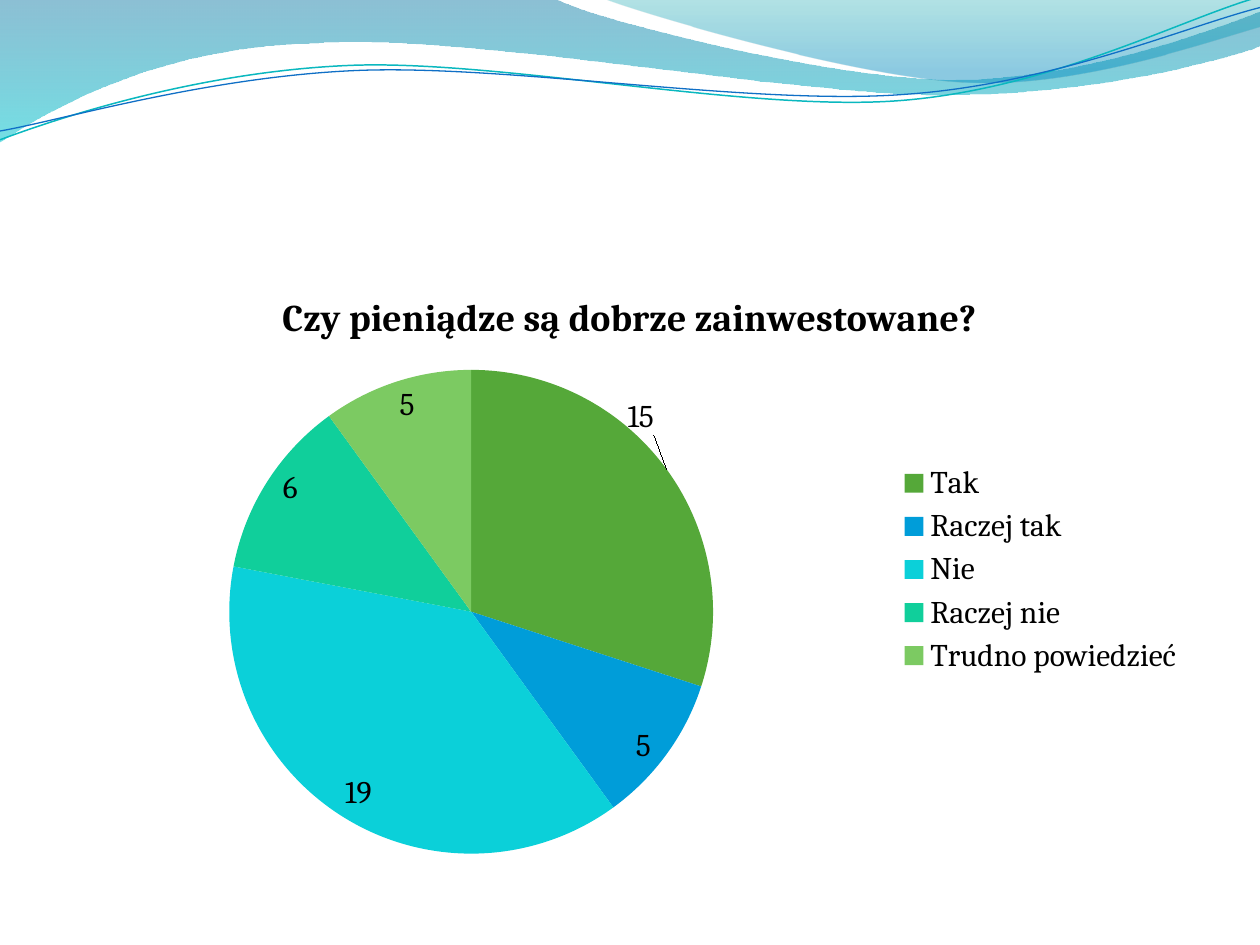
from dataclasses import dataclass

from lxml import etree
from pptx import Presentation
from pptx.chart.data import CategoryChartData
from pptx.dml.color import RGBColor
from pptx.enum.chart import XL_CHART_TYPE as ChartType
from pptx.enum.chart import XL_LABEL_POSITION as LabelPosition
from pptx.enum.chart import XL_LEGEND_POSITION as LegendPosition
from pptx.oxml import parse_xml
from pptx.oxml.ns import nsdecls, qn
from pptx.util import Inches, Pt

WIDTH, HEIGHT = 10, 7.5


@dataclass(frozen=True)
class Theme:
    font: str = "Cambria"
    text: str = "000000"
    body_size: float = 18
    title_size: float = 21.6
    slices: tuple = ("55A839", "009DD9", "0BD0D9", "10CF9B", "7CCA62")
    # Gradient stops: position, colour, opacity in percent
    wide_wave: tuple = ((0, "0074A1", 45), (1, "00C6CF", 55))
    right_wave: tuple = ((0, "00A1A9", 30), (0.8, "008BBF", 45))
    teal_line: str = "0AB8BF"
    blue_line: str = "0F6FC6"


THEME = Theme()

# Wave outlines in inches: a pair is a straight step, six numbers a Bézier curve
WIDE_WAVE = [
    (0, 0), (4.4, -0.01),
    (4.76, 0.17, 6.64, 0.63, 7.58, 0.63), (8.53, 0.63, 9.58, 0.26, 10, 0.09),
    (10.01, 0.36),
    (9.83, 0.44, 8.7, 0.76, 7.46, 0.75), (6.22, 0.75, 3.82, 0.28, 2.57, 0.34),
    (1.29, 0.36, 0.46, 0.83, -0.01, 1.13), (0, 0),
]
RIGHT_WAVE = [
    (4.79, -0.01),
    (5.09, 0.11, 6.82, 0.62, 7.69, 0.65), (8.56, 0.69, 9.61, 0.32, 10, 0.21),
    (10, 0), (4.79, -0.01),
]
TEAL_CURVE = [
    (0, 1.11),
    (0.48, 0.93, 1.58, 0.57, 2.77, 0.52), (3.95, 0.47, 5.93, 0.89, 7.13, 0.8),
    (8.33, 0.71, 9.38, 0.15, 9.98, -0.02),
]
BLUE_CURVE = [
    (0, 1.04),
    (0.47, 0.96, 1.64, 0.61, 2.83, 0.56), (4.03, 0.51, 5.97, 0.84, 7.17, 0.75),
    (8.36, 0.67, 9.41, 0.21, 10, 0.06),
]

QUESTION = "Czy pieniądze są dobrze zainwestowane?"
ANSWERS = {"Tak": 15, "Raczej tak": 5, "Nie": 19, "Raczej nie": 6,
           "Trudno powiedzieć": 5}


def bend_steps(shape, outline):
    """Join each three steps that stand for a Bézier curve into one curve."""
    steps = iter(list(shape.element.iter(qn("a:lnTo"))))
    for segment in outline[1:]:
        group = [next(steps) for _ in range(len(segment) // 2)]
        if len(group) == 3:
            curve = etree.Element(qn("a:cubicBezTo"))
            group[0].addprevious(curve)
            for step in group:
                curve.append(step[0])
                step.getparent().remove(step)


def add_outline(slide, outline, closed):
    points = [(Inches(segment[i]), Inches(segment[i + 1]))
              for segment in outline for i in range(0, len(segment), 2)]
    builder = slide.shapes.build_freeform(*points[0])
    builder.add_line_segments(points[1:], close=closed)
    shape = builder.convert_to_shape()
    bend_steps(shape, outline)
    shape.shadow.inherit = False
    return shape


def add_wave(slide, outline, stops):
    shape = add_outline(slide, outline, closed=True)
    shape.line.fill.background()
    shape.fill.gradient()
    shape.fill.gradient_angle = 270  # top to bottom
    for stop, (position, color, _) in zip(shape.fill.gradient_stops, stops):
        stop.position = position
        stop.color.rgb = RGBColor.from_string(color)
    colors = shape.element.iter(qn("a:srgbClr"))
    for element, (_, _, opacity) in zip(colors, stops):
        etree.SubElement(element, qn("a:alpha"), val=str(opacity * 1000))


def add_curve(slide, outline, color, width):
    shape = add_outline(slide, outline, closed=False)
    shape.fill.background()
    shape.line.color.rgb = RGBColor.from_string(color)
    shape.line.width = Pt(width)


def format_font(font, size, bold=False, color=THEME.text):
    font.name = THEME.font
    font.size = Pt(size)
    font.bold = bold
    font.color.rgb = RGBColor.from_string(color)


def write_text(text_frame, text, **font_format):
    run = text_frame.paragraphs[0].add_run()
    run.text = text
    format_font(run.font, **font_format)


def manual_layout(**settings):
    """Build a chart layout; lengths are shares of the chart's size."""
    items = "".join(f'<c:{key} val="{value}"/>' for key, value in settings.items())
    return parse_xml(f'<c:layout {nsdecls("c")}><c:manualLayout>{items}'
                     '</c:manualLayout></c:layout>')


def place_plot(chart, **shares):
    plot_area = chart.element.find(".//" + qn("c:plotArea"))
    for layout in plot_area.findall(qn("c:layout")):
        plot_area.remove(layout)
    plot_area.insert(0, manual_layout(layoutTarget="inner", xMode="edge",
                                      yMode="edge", **shares))


def shift_first_label(series, **shares):
    label = series.points[0].data_label
    label.position = LabelPosition.BEST_FIT
    format_font(label.font, THEME.body_size)
    index = series.data_labels._element.find(qn("c:dLbl")).find(qn("c:idx"))
    index.addnext(manual_layout(**shares))


def add_pie(slide, title, answers, left, top, width, height):
    data = CategoryChartData()
    data.categories = list(answers)
    data.add_series(title, list(answers.values()))
    chart = slide.shapes.add_chart(
        ChartType.PIE, Inches(left), Inches(top), Inches(width), Inches(height),
        data).chart
    format_font(chart.font, THEME.body_size)
    chart.has_title = True
    write_text(chart.chart_title.text_frame, title,
               size=THEME.title_size, bold=True)
    chart.chart_title.include_in_layout = False

    # Legend
    chart.has_legend = True
    chart.legend.position = LegendPosition.RIGHT
    chart.legend.include_in_layout = False

    # Slices and their values
    plot = chart.plots[0]
    plot.vary_by_categories = True
    series = plot.series[0]
    for index, color in enumerate(THEME.slices):
        fill = series.points[index].format.fill
        fill.solid()
        fill.fore_color.rgb = RGBColor.from_string(color)
    labels = series.data_labels
    labels.show_value = True
    labels.position = LabelPosition.BEST_FIT
    format_font(labels.font, THEME.body_size)
    shift_first_label(series, x=-0.04, y=-0.05)
    place_plot(chart, x=0.14, y=0.17, w=0.44, h=0.8)


def main():
    presentation = Presentation()
    presentation.slide_width = Inches(WIDTH)
    presentation.slide_height = Inches(HEIGHT)
    slide = presentation.slides.add_slide(presentation.slide_layouts[6])

    # Waves along the top
    add_wave(slide, WIDE_WAVE, THEME.wide_wave)
    add_wave(slide, RIGHT_WAVE, THEME.right_wave)
    add_curve(slide, TEAL_CURVE, THEME.teal_line, 0.85)
    add_curve(slide, BLUE_CURVE, THEME.blue_line, 0.75)

    # Survey answers
    margin = 0.05 * WIDTH
    add_pie(slide, QUESTION, ANSWERS, left=margin, top=2.12,
            width=WIDTH - 2 * margin, height=0.64 * HEIGHT)

    presentation.save("out.pptx")


if __name__ == "__main__":
    main()
